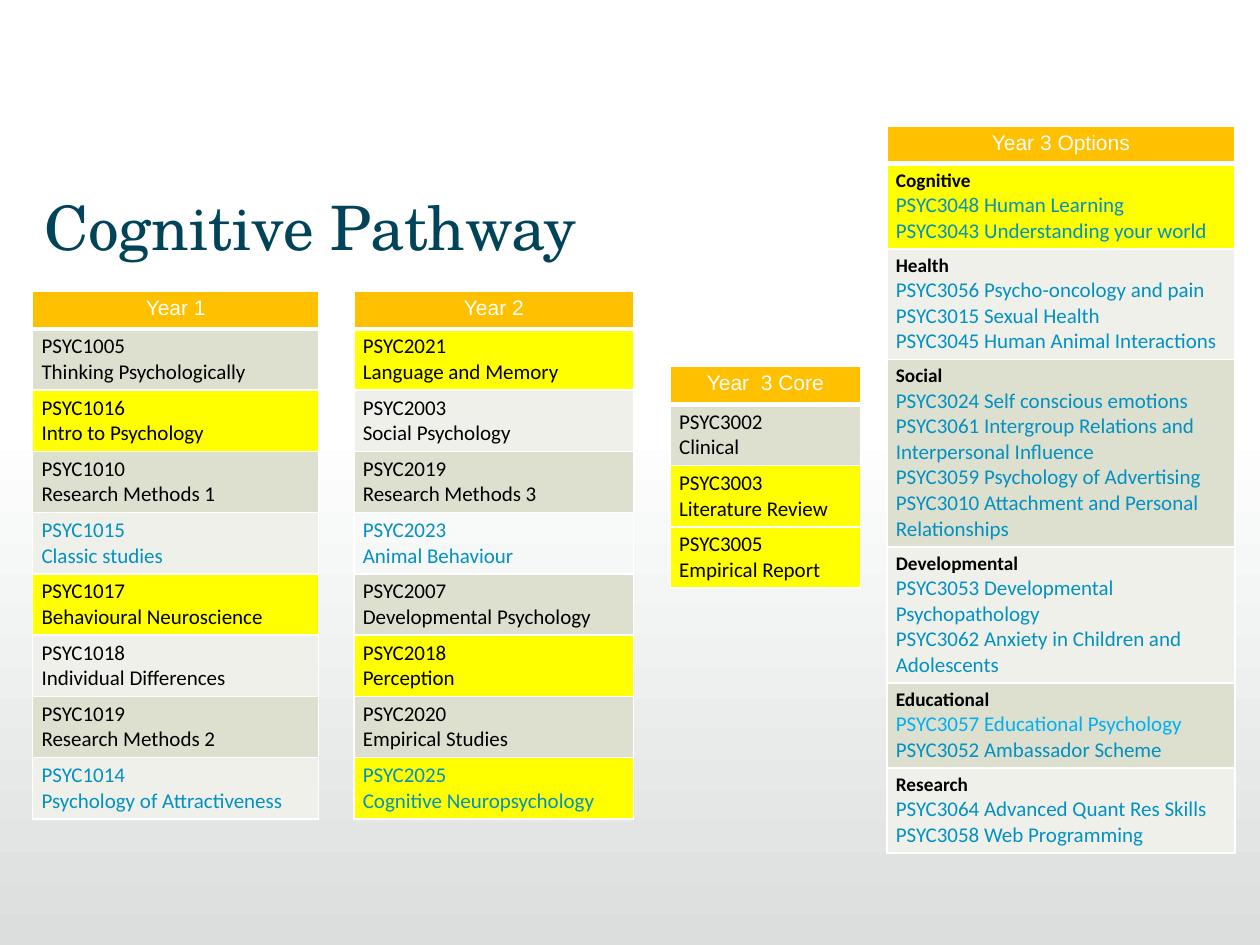
from lxml.etree import SubElement
from pptx import Presentation
from pptx.dml.color import RGBColor
from pptx.enum.shapes import MSO_SHAPE
from pptx.enum.text import MSO_ANCHOR, MSO_AUTO_SIZE, PP_ALIGN
from pptx.oxml.ns import qn
from pptx.util import Inches, Pt

WHITE, BLACK, BLUE, BRIGHT_BLUE = "FFFFFF", "000000", "0291C1", "00B0F0"
YELLOW, ORANGE, NAVY, GREY = "FFFF00", "FFC000", "014359", "DCDEDE"
BANDS = ("DDDFCF", "EFF0E9")
HEADER_HEIGHT, MODULE_HEIGHT = 0.3, 0.48

# Module: code, name, text colour, fill ("band" follows the row banding)
YEAR_1 = [
    ("PSYC1005", "Thinking Psychologically", BLACK, "band"),
    ("PSYC1016", "Intro to Psychology", BLACK, YELLOW),
    ("PSYC1010", "Research Methods 1", BLACK, "band"),
    ("PSYC1015", "Classic studies", BLUE, "band"),
    ("PSYC1017", "Behavioural Neuroscience", BLACK, YELLOW),
    ("PSYC1018", "Individual Differences", BLACK, "band"),
    ("PSYC1019", "Research Methods 2", BLACK, "band"),
    ("PSYC1014", "Psychology of Attractiveness", BLUE, "band"),
]
YEAR_2 = [
    ("PSYC2021", "Language and Memory", BLACK, YELLOW),
    ("PSYC2003", "Social Psychology", BLACK, "band"),
    ("PSYC2019", "Research Methods 3", BLACK, "band"),
    ("PSYC2023", "Animal Behaviour", BLUE, None),
    ("PSYC2007", "Developmental Psychology", BLACK, "band"),
    ("PSYC2018", "Perception", BLACK, YELLOW),
    ("PSYC2020", "Empirical Studies", BLACK, "band"),
    ("PSYC2025", "Cognitive Neuropsychology", BLUE, YELLOW),
]
YEAR_3_CORE = [
    ("PSYC3002", "Clinical", BLACK, "band"),
    ("PSYC3003", "Literature Review", BLACK, YELLOW),
    ("PSYC3005", "Empirical Report", BLACK, YELLOW),
]
# Option group: theme, modules, fill, row height
YEAR_3_OPTIONS = [
    ("Cognitive", ["PSYC3048 Human Learning",
                   "PSYC3043 Understanding your world"], YELLOW, 0.65),
    ("Health", ["PSYC3056 Psycho-oncology and pain",
                "PSYC3015 Sexual Health",
                "PSYC3045 Human Animal Interactions"], "band", 0.85),
    ("Social", ["PSYC3024 Self conscious emotions",
                "PSYC3061 Intergroup Relations and Interpersonal Influence",
                "PSYC3059 Psychology of Advertising",
                "PSYC3010 Attachment and Personal Relationships"], "band", 1.45),
    ("Developmental", ["PSYC3053 Developmental Psychopathology",
                       "PSYC3062 Anxiety in Children and Adolescents"], "band", 1.05),
    ("Educational", ["PSYC3057 Educational Psychology",
                     "PSYC3052 Ambassador Scheme"], "band", 0.65),
    ("Research", ["PSYC3064 Advanced Quant Res Skills",
                  "PSYC3058 Web Programming"], "band", 0.65),
]
BRIGHT_OPTIONS = {"PSYC3057 Educational Psychology"}


def rgb(value):
    return RGBColor.from_string(value)


def style(paragraph, color, **font_values):
    for key, value in font_values.items():
        setattr(paragraph.font, key, value)
    paragraph.font.color.rgb = rgb(color)


def add_borders(cell, top, bottom):
    """Draw white borders; they must be added before the cell's fill."""
    properties = cell._tc.get_or_add_tcPr()
    for side, width in {"L": 1, "R": 1, "T": top, "B": bottom}.items():
        line = SubElement(properties, qn(f"a:ln{side}"), w=str(Pt(width)))
        solid = SubElement(line, qn("a:solidFill"))
        SubElement(solid, qn("a:srgbClr"), val=WHITE)


def write_cell(cell, lines, fill, top=1, bottom=1, align=PP_ALIGN.LEFT):
    """Fill a cell with lines given as (text, colour, font values)."""
    add_borders(cell, top, bottom)
    if fill:
        cell.fill.solid()
        cell.fill.fore_color.rgb = rgb(fill)
    else:
        cell.fill.background()
    margins = {"margin_left": 0.07, "margin_right": 0.07,
               "margin_top": 0.04, "margin_bottom": 0.04}
    for key, value in margins.items():
        setattr(cell, key, Inches(value))
    cell.text = "\n".join(text for text, _, _ in lines)
    for paragraph, (_, color, font_values) in zip(cell.text_frame.paragraphs, lines):
        paragraph.alignment = align
        style(paragraph, color, **font_values)


def module_rows(modules):
    font = {"name": "Calibri", "size": Pt(12), "bold": False}
    return [([(code, color, font), (name, color, font)], fill, MODULE_HEIGHT)
            for code, name, color, fill in modules]


def option_rows(groups):
    theme_font = {"name": "Calibri", "size": Pt(11), "bold": True}
    option_font = {"name": "Calibri", "size": Pt(12), "bold": False}
    return [([(theme, BLACK, theme_font)]
             + [(option, BRIGHT_BLUE if option in BRIGHT_OPTIONS else BLUE, option_font)
                for option in options], fill, height)
            for theme, options, fill, height in groups]


def add_pathway_table(slide, heading, rows, left, top, width):
    heights = [HEADER_HEIGHT] + [height for _, _, height in rows]
    table = slide.shapes.add_table(
        len(heights), 1, Inches(left), Inches(top),
        Inches(width), Inches(sum(heights))).table
    for row, height in zip(table.rows, heights):
        row.height = Inches(height)
    header_font = {"name": "Arial", "size": Pt(12), "bold": False}
    write_cell(table.cell(0, 0), [(heading, WHITE, header_font)], ORANGE,
               bottom=3, align=PP_ALIGN.CENTER)
    for index, (lines, fill, _) in enumerate(rows):
        write_cell(table.cell(index + 1, 0), lines,
                   BANDS[index % 2] if fill == "band" else fill,
                   top=1 if index else 3)


def add_backdrop(slide):
    """Shade the lower part of the slide, behind everything else."""
    backdrop = slide.shapes.add_shape(
        MSO_SHAPE.RECTANGLE, Inches(-0.09), Inches(3.33), Inches(10.09), Inches(4.17))
    backdrop.shadow.inherit = False
    backdrop.line.fill.background()
    backdrop.fill.gradient()
    backdrop.fill.gradient_angle = 270
    for stop, color, position in zip(backdrop.fill.gradient_stops, (WHITE, GREY), (0, 1)):
        stop.color.rgb = rgb(color)
        stop.position = position
    slide.shapes._spTree.insert(2, backdrop._element)


def add_title(slide, text):
    title = slide.shapes.title
    place = {"left": 0.35, "top": 1.45, "width": 9.29, "height": 0.53}
    for key, value in place.items():
        setattr(title, key, Inches(value))
    frame = title.text_frame
    frame.text = text
    frame_values = {"margin_left": 0, "vertical_anchor": MSO_ANCHOR.TOP,
                    "auto_size": MSO_AUTO_SIZE.NONE, "word_wrap": True}
    for key, value in frame_values.items():
        setattr(frame, key, value)
    frame.paragraphs[0].alignment = PP_ALIGN.LEFT
    style(frame.paragraphs[0], NAVY, name="TeX Gyre Schola", size=Pt(35))


def main():
    deck = Presentation()
    deck.slide_width, deck.slide_height = Inches(10), Inches(7.5)
    slide = deck.slides.add_slide(deck.slide_layouts[5])
    add_backdrop(slide)
    add_title(slide, "Cognitive Pathway")
    # Heading, rows, left, top, width
    tables = [
        ("Year 1", module_rows(YEAR_1), 0.26, 2.31, 2.27),
        ("Year 2", module_rows(YEAR_2), 2.81, 2.31, 2.22),
        ("Year  3 Core", module_rows(YEAR_3_CORE), 5.32, 2.91, 1.51),
        ("Year 3 Options", option_rows(YEAR_3_OPTIONS), 7.04, 1, 2.76),
    ]
    for table in tables:
        add_pathway_table(slide, *table)
    deck.save("out.pptx")


if __name__ == "__main__":
    main()
